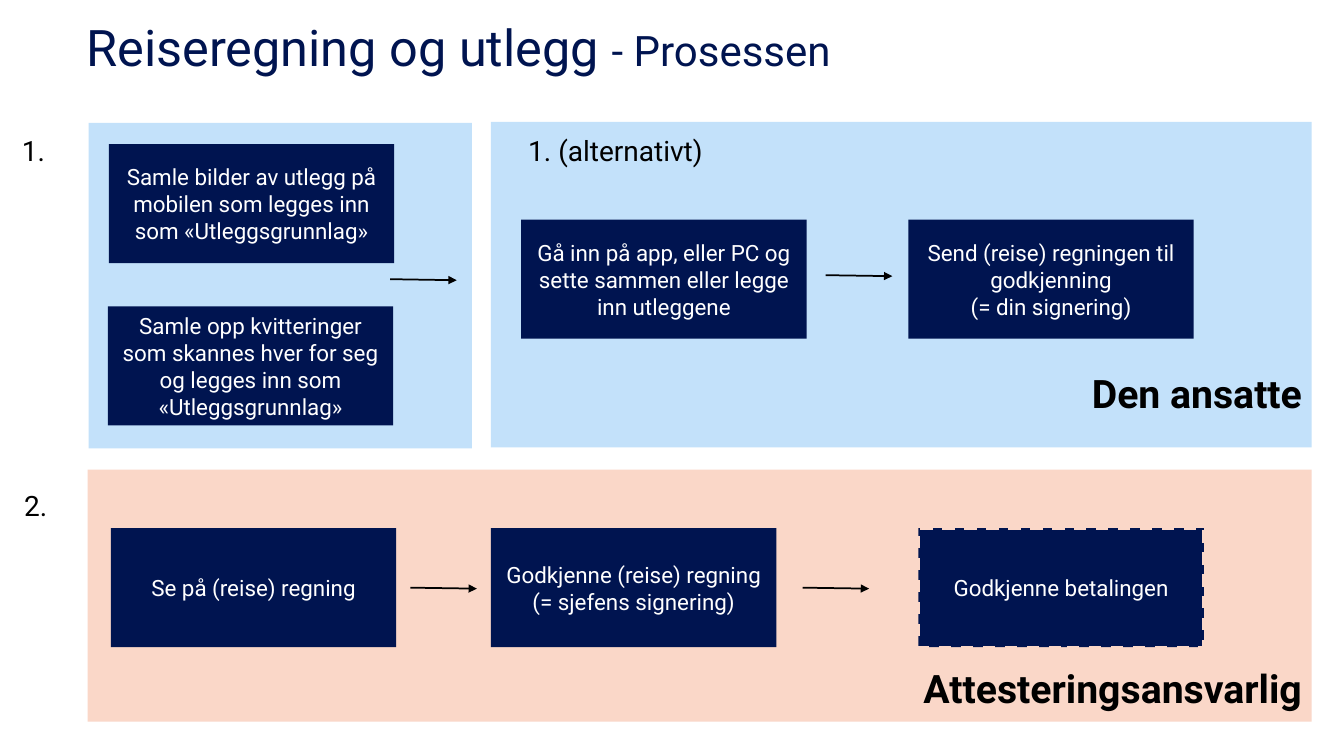
from lxml.etree import SubElement
from pptx import Presentation
from pptx.dml.color import RGBColor
from pptx.enum.dml import MSO_LINE
from pptx.enum.shapes import MSO_CONNECTOR, MSO_SHAPE
from pptx.enum.text import MSO_ANCHOR, PP_ALIGN
from pptx.oxml.ns import qn
from pptx.util import Inches, Pt

# Content
FONT = "Roboto"
NAVY, SKY, PEACH, BLACK, WHITE = "001450", "C3E1FA", "FAD7C8", "000000", "FFFFFF"

TITLE = [("Reiseregning og utlegg ", 36), ("- Prosessen", 30)]

# left, top, width, height, colour, role, space under the role
PANELS = [
    (0.88, 1.22, 3.8, 3.23, SKY, "", 0),
    (4.87, 1.21, 8.14, 3.23, SKY, "Den ansatte", 0.31),
    (0.87, 4.66, 12.14, 2.5, PEACH, "Attesteringsansvarlig", 0.1),
]

# left, top, lines, dashed outline
STEP_WIDTH, STEP_HEIGHT = 2.83, 1.18
EMPLOYEE_TOP, APPROVER_TOP = 2.18, 5.24
STEPS = [
    (1.08, 1.43, ["Samle bilder av utlegg på mobilen som legges inn som «Utleggsgrunnlag»"], False),
    (1.07, 3.04, ["Samle opp kvitteringer som skannes hver for seg og legges inn som «Utleggsgrunnlag»"], False),
    (5.17, EMPLOYEE_TOP, ["Gå inn på app, eller PC og sette sammen eller legge inn utleggene"], False),
    (9.01, EMPLOYEE_TOP, ["Send (reise) regningen til godkjenning", "(= din signering)"], False),
    (1.1, APPROVER_TOP, ["Se på (reise) regning"], False),
    (4.87, APPROVER_TOP, ["Godkjenne (reise) regning", "(= sjefens signering)"], False),
    (9.11, APPROVER_TOP, ["Godkjenne betalingen"], True),
]

# Start of each arrow
ARROW_RUN, ARROW_DROP = 0.66, 0.01
ARROWS = [(3.87, 2.77), (8.19, 2.73), (4.07, 5.83), (7.96, 5.83)]

# left, top, width, text, wrap
NUMBERS = [
    (0.12, 1.28, 0.44, "1.", False),
    (0.14, 4.8, 0.44, "2.", False),
    (5.14, 1.28, 3.38, "1. (alternativt)", True),
]


def colour(value):
    return RGBColor.from_string(value)


def write(shape, lines, size=16, ink=BLACK, bold=False, align=PP_ALIGN.LEFT,
          anchor=MSO_ANCHOR.MIDDLE, wrap=True, bottom=0.05, spacing=1.0):
    """Each line is a string or a list of (text, size) runs."""
    frame = shape.text_frame
    frame.word_wrap = wrap
    frame.vertical_anchor = anchor
    frame.margin_bottom = Inches(bottom)
    for index, line in enumerate(lines):
        paragraph = frame.add_paragraph() if index else frame.paragraphs[0]
        paragraph.alignment = align
        paragraph.line_spacing = spacing
        runs = [(line, size)] if isinstance(line, str) else line
        for text, points in runs:
            run = paragraph.add_run()
            run.text = text
            run.font.name = FONT
            run.font.size = Pt(points)
            run.font.bold = bold
            run.font.color.rgb = colour(ink)


def add_block(slide, left, top, width, height, fill):
    block = slide.shapes.add_shape(
        MSO_SHAPE.RECTANGLE, Inches(left), Inches(top), Inches(width), Inches(height))
    block.shadow.inherit = False
    block.fill.solid()
    block.fill.fore_color.rgb = colour(fill)
    block.line.fill.background()
    return block


def add_label(slide, left, top, width, height):
    return slide.shapes.add_textbox(
        Inches(left), Inches(top), Inches(width), Inches(height))


def add_arrow(slide, left, top):
    arrow = slide.shapes.add_connector(
        MSO_CONNECTOR.STRAIGHT, Inches(left), Inches(top),
        Inches(left + ARROW_RUN), Inches(top + ARROW_DROP))
    arrow.line.color.rgb = colour(BLACK)
    arrow.line.width = Pt(1.25)
    SubElement(arrow.line._get_or_add_ln(), qn("a:tailEnd"), type="triangle")
    SubElement(arrow._element.spPr, qn("a:effectLst"))


def main():
    deck = Presentation()
    deck.slide_width, deck.slide_height = Inches(13.33), Inches(7.5)
    slide = deck.slides.add_slide(deck.slide_layouts[6])

    # Panels with the role in the lower right corner
    for left, top, width, height, fill, role, gap in PANELS:
        panel = add_block(slide, left, top, width, height, fill)
        if role:
            write(panel, [role], size=28, bold=True, align=PP_ALIGN.RIGHT,
                  anchor=MSO_ANCHOR.BOTTOM, bottom=gap)

    # Title
    write(add_label(slide, 0.76, 0.04, 11.5, 0.92), [TITLE], ink=NAVY, spacing=0.9)

    # Process steps
    for left, top, lines, dashed in STEPS:
        step = add_block(slide, left, top, STEP_WIDTH, STEP_HEIGHT, NAVY)
        if dashed:
            step.line.color.rgb = colour(PEACH)
            step.line.width = Pt(2.25)
            step.line.dash_style = MSO_LINE.DASH
        write(step, lines, ink=WHITE, align=PP_ALIGN.CENTER)

    # Arrows between the steps
    for left, top in ARROWS:
        add_arrow(slide, left, top)

    # Stage numbers
    for left, top, width, number, wrap in NUMBERS:
        write(add_label(slide, left, top, width, 0.44), [number], size=20,
              anchor=MSO_ANCHOR.TOP, wrap=wrap)

    deck.save("out.pptx")


if __name__ == "__main__":
    main()
